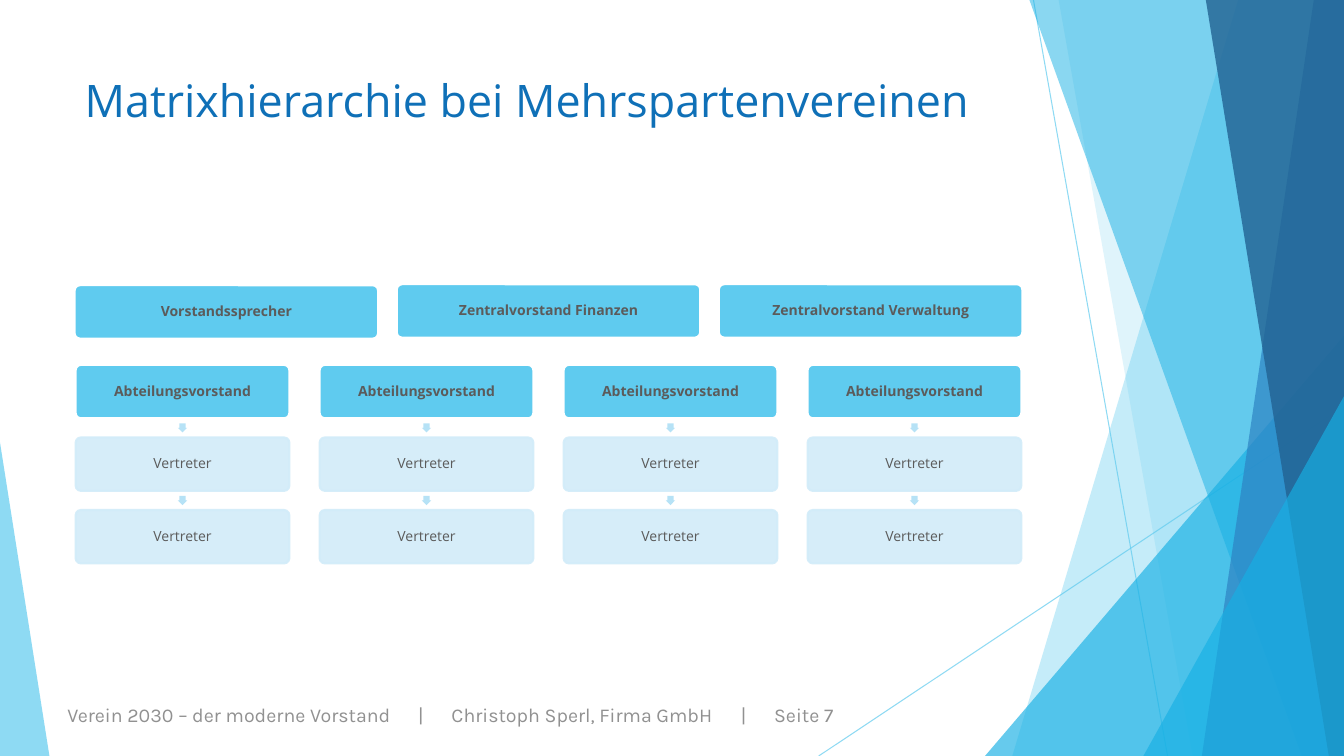
import lxml.etree
import pptx
import pptx.dml.color
import pptx.enum.shapes
import pptx.enum.text
import pptx.oxml.ns
import pptx.util

Inches = pptx.util.Inches
Pt = pptx.util.Pt
RGBColor = pptx.dml.color.RGBColor
Shape = pptx.enum.shapes.MSO_SHAPE
Align = pptx.enum.text.PP_ALIGN
Anchor = pptx.enum.text.MSO_ANCHOR

SKY = RGBColor(0x5F, 0xCB, 0xEF)
CYAN = RGBColor(0x17, 0xB0, 0xE4)
BLUE = RGBColor(0x2E, 0x83, 0xC3)
NAVY = RGBColor(0x22, 0x62, 0x92)
PALE = RGBColor(0xD2, 0xEC, 0xF9)
ICE = RGBColor(0xB6, 0xE2, 0xF6)
WHITE = RGBColor(0xFF, 0xFF, 0xFF)
TITLE = RGBColor(0x0F, 0x70, 0xB7)
TEXT = RGBColor(0x5B, 0x5B, 0x5B)
GREY = RGBColor(0x91, 0x91, 0x91)

WIDE, HIGH = 13.33, 7.5


def sub(node, tag, **attrs):
    child = lxml.etree.SubElement(node, pptx.oxml.ns.qn(tag))
    for key, val in attrs.items():
        child.set(key, str(val))
    return child


def paint(fill, color, alpha=100):
    """Solid fill, alpha in percent."""
    fill.solid()
    fill.fore_color.rgb = color
    if alpha < 100:
        node = fill._xPr.find(".//" + pptx.oxml.ns.qn("a:srgbClr"))
        sub(node, "a:alpha", val=alpha * 1000)


def block(slide, kind, box, color, alpha=100, adjs=()):
    shape = slide.shapes.add_shape(kind, *map(Inches, box))
    shape.shadow.inherit = False
    for i, val in enumerate(adjs):
        shape.adjustments[i] = val
    paint(shape.fill, color, alpha)
    shape.line.fill.background()
    return shape


def facet(slide, points, color, alpha):
    form = slide.shapes.build_freeform(
        Inches(points[0][0]), Inches(points[0][1]), scale=1.0)
    form.add_line_segments([(Inches(x), Inches(y)) for x, y in points[1:]])
    shape = form.convert_to_shape()
    shape.shadow.inherit = False
    paint(shape.fill, color, alpha)
    shape.line.fill.background()


def ray(slide, *ends):
    line = slide.shapes.add_connector(
        pptx.enum.shapes.MSO_CONNECTOR.STRAIGHT, *map(Inches, ends))
    line.line.width = Pt(0.75)
    paint(line.line.fill, SKY, 70)
    sub(line._element.spPr, "a:effectLst")


def decor(slide, wide, high):
    """Facets along the right edge and a wedge at the lower left."""
    def band(top, foot, color, alpha):
        facet(slide, [(top, 0), (wide, 0), (wide, high), (foot, high)],
              color, alpha)

    def wedge(left, width, height, tip, color, alpha):
        box = (left, high - height, width, height)
        block(slide, Shape.ISOSCELES_TRIANGLE, box, color, alpha, [tip])

    ray(slide, 10.25, 0, 11.58, high)
    ray(slide, wide, 4.03, 8.12, high)
    band(12.28, 10.04, SKY, 36)
    band(10.5, 11.83, SKY, 20)
    wedge(wide - 3.56, 3.56, 4.17, 1, CYAN, 66)
    band(10.21, 12.91, CYAN, 50)
    band(13.03, 11.92, BLUE, 70)
    band(11.96, 13.18, NAVY, 80)
    wedge(wide - 1.99, 1.99, 3.57, 1, CYAN, 66)
    wedge(0, 0.49, 3.11, 0, SKY, 70)


def head(slide, box, text):
    title = slide.shapes.title
    title.left, title.top, title.width, title.height = map(Inches, box)
    frame = title.text_frame
    frame.text = text
    frame.vertical_anchor = Anchor.TOP
    frame.auto_size = pptx.enum.text.MSO_AUTO_SIZE.NONE
    para = frame.paragraphs[0]
    para.alignment = Align.LEFT
    para.font.size = Pt(32)
    para.font.name = "Open Sans"
    para.font.color.rgb = TITLE


def foot(slide, box, parts):
    frame = slide.shapes.add_textbox(*map(Inches, box)).text_frame
    frame.word_wrap = True
    para = frame.paragraphs[0]
    para.text = "\t|\t".join(parts)
    # Tab stops for the dividers and the parts after them
    tabs = sub(para._p.get_or_add_pPr(), "a:tabLst")
    for stop in (3.48, 3.81, 6.68, 7.01):
        sub(tabs, "a:tab", pos=Inches(stop), algn="l")
    para.font.size = Pt(14)
    para.font.name = "Karla"
    para.font.color.rgb = GREY


def card(slide, box, text, chief):
    """Rounded box: a strong one for a chief, a pale one for a deputy."""
    color, alpha = (SKY, 100) if chief else (PALE, 90)
    shape = block(slide, Shape.ROUNDED_RECTANGLE, box, color, alpha, [0.1])
    shape.line.width = Pt(1.5)
    paint(shape.line.fill, WHITE if chief else PALE, alpha)
    frame = shape.text_frame
    frame.word_wrap = True
    frame.vertical_anchor = Anchor.MIDDLE
    frame.margin_left = frame.margin_right = Inches(0.01)
    frame.margin_top = frame.margin_bottom = Inches(0.01)
    para = frame.paragraphs[0]
    para.text = text
    para.alignment = Align.CENTER
    para.line_spacing = 0.9
    para.font.size = Pt(10)
    para.font.name = "Open Sans"
    para.font.bold = chief
    para.font.color.rgb = TEXT


def board(slide, left, top, width):
    """Top row of the central board."""
    names = ("Vorstandssprecher", "Zentralvorstand Finanzen",
             "Zentralvorstand Verwaltung")
    size = 3.01
    step = (width - size) / (len(names) - 1)
    for i, name in enumerate(names):
        drop = 0.01 if i == 0 else 0
        card(slide, (left + i * step, top + drop, size, 0.53), name, True)


def units(slide, left, top, width):
    """Four columns: a department chief above two deputies."""
    size, count, tip = 2.12, 4, 0.09
    step = (width - size) / (count - 1)
    for col in range(count):
        x = left + col * step
        for row, name in enumerate(
                ("Abteilungsvorstand", "Vertreter", "Vertreter")):
            y = top + row * 0.72
            if row:
                arrow = block(slide, Shape.RIGHT_ARROW,
                              (x + (size - tip) / 2, y - 0.14, tip, tip),
                              ICE, adjs=[0.67, 0.5])
                arrow.rotation = 90
            card(slide, (x, y, size, 0.53), name, row == 0)


def main():
    deck = pptx.Presentation()
    deck.slide_width, deck.slide_height = Inches(WIDE), Inches(HIGH)
    slide = deck.slides.add_slide(deck.slide_layouts[5])
    decor(slide, WIDE, HIGH)
    foot(slide, (0.57, 6.92, 10.36, 0.34),
         ("Verein 2030 – der moderne Vorstand",
          "Christoph Sperl, Firma GmbH", "Seite 7"))
    head(slide, (0.74, 0.67, 9.4, 1.44),
         "Matrixhierarchie bei Mehrspartenvereinen")
    units(slide, 0.75, 3.62, 9.38)
    board(slide, 0.74, 2.82, 9.4)
    deck.save("out.pptx")


if __name__ == "__main__":
    main()
